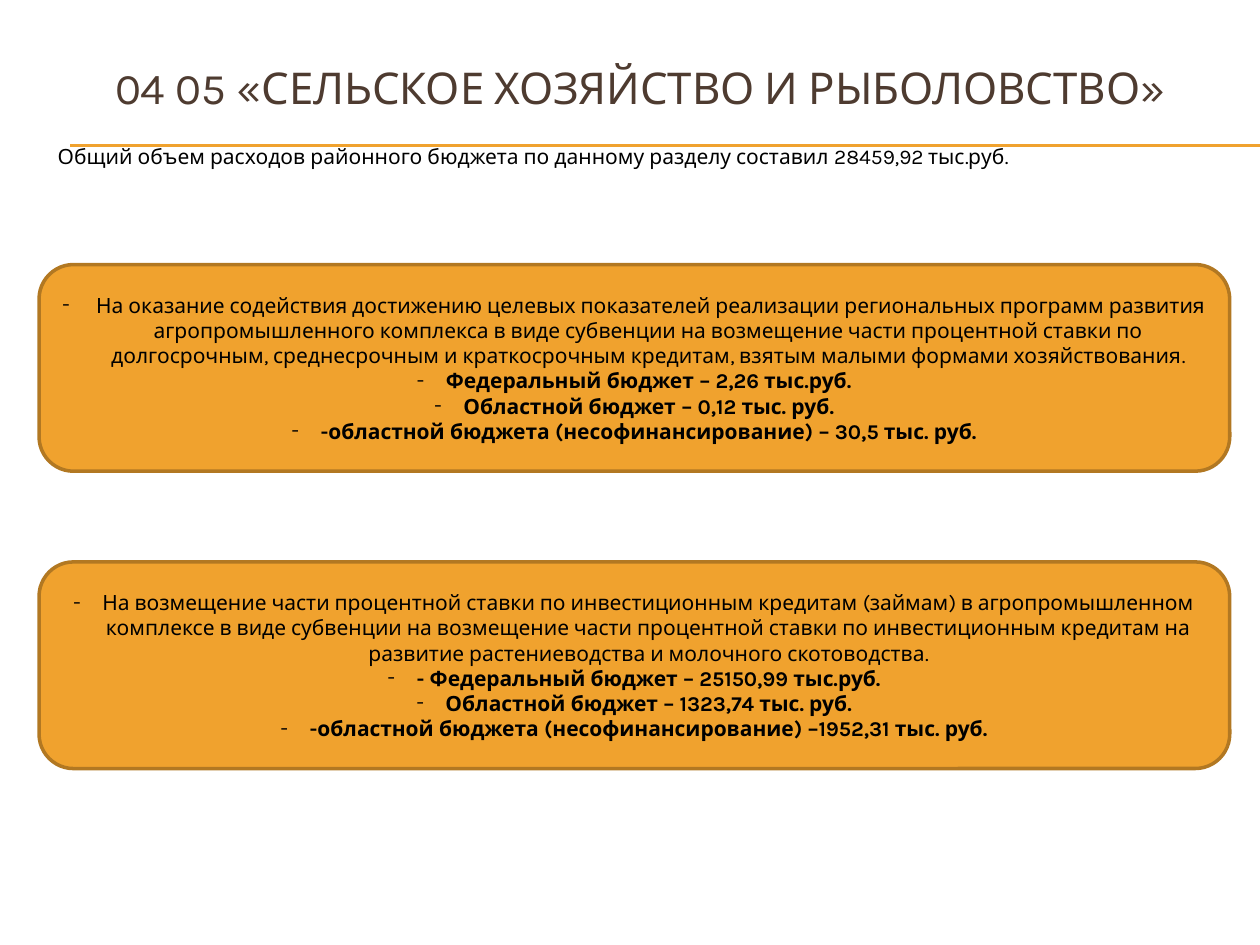
from lxml.etree import SubElement
from pptx import Presentation
from pptx.dml.color import RGBColor
from pptx.enum.shapes import MSO_CONNECTOR as Conn, MSO_SHAPE as Shape
from pptx.enum.text import MSO_ANCHOR as Anchor, PP_ALIGN as Align
from pptx.oxml.ns import qn
from pptx.util import Pt

FONT = "Karla"
GOLD = RGBColor(0xF0, 0xA2, 0x2E)
EDGE = RGBColor(0xB2, 0x78, 0x22)
BROWN = RGBColor(0x4E, 0x3B, 0x30)
BLACK = RGBColor(0, 0, 0)

TITLE = "04 05 «СЕЛЬСКОЕ ХОЗЯЙСТВО И РЫБОЛОВСТВО»"
TOTAL = ("Общий объем расходов районного бюджета по данному разделу "
         "составил 28459,92 тыс.руб.")
# Each box: top, purpose of the money, sums by budget
BOXES = [
    (151.2,
     " На оказание содействия достижению целевых показателей реализации "
     "региональных программ развития агропромышленного комплекса в виде "
     "субвенции на возмещение части процентной ставки по долгосрочным, "
     "среднесрочным и краткосрочным кредитам, взятым малыми формами "
     "хозяйствования.",
     ["Федеральный бюджет – 2,26 тыс.руб.",
      "Областной бюджет – 0,12 тыс. руб.",
      "-областной бюджета (несофинансирование) – 30,5 тыс. руб."]),
    (321.1,
     "На возмещение части процентной ставки по инвестиционным кредитам "
     "(займам) в агропромышленном комплексе в виде субвенции на возмещение "
     "части процентной ставки по инвестиционным кредитам на развитие "
     "растениеводства и молочного скотоводства.",
     ["- Федеральный бюджет – 25150,99 тыс.руб.",
      "Областной бюджет – 1323,74 тыс. руб.",
      "-областной бюджета (несофинансирование) –1952,31 тыс. руб."]),
]


def write(para, text, align, size=12, color=BLACK, bold=False):
    para.alignment = align
    run = para.add_run()
    run.text = text
    look = {"name": FONT, "size": Pt(size), "bold": bold}
    for key, value in look.items():
        setattr(run.font, key, value)
    run.font.color.rgb = color


def indent(para, left, first):
    props = para._p.get_or_add_pPr()
    props.set("marL", str(Pt(left)))
    props.set("indent", str(Pt(first)))
    return props


def add_title(slide):
    title = slide.shapes.title
    place = {"left": 23.8, "top": 16.6, "width": 684, "height": 66.2}
    for key, value in place.items():
        setattr(title, key, Pt(value))
    frame = title.text_frame
    frame.vertical_anchor = Anchor.MIDDLE
    write(frame.paragraphs[0], TITLE, Align.CENTER, 25, BROWN)


def add_rule(slide, y):
    rule = slide.shapes.add_connector(Conn.STRAIGHT, Pt(40.3), Pt(y),
                                      Pt(720), Pt(y))
    rule.line.color.rgb = GOLD
    rule.line.width = Pt(0.75)
    SubElement(rule._element.spPr, qn("a:effectLst"))


def add_total(slide):
    box = slide.shapes.add_textbox(Pt(11.5), Pt(78.5), Pt(697.7), Pt(33.8))
    frame = box.text_frame
    frame.word_wrap = True
    frame.vertical_anchor = Anchor.TOP
    para = frame.paragraphs[0]
    write(para, TOTAL, Align.JUSTIFY)
    indent(para, 0, 14.4)


def add_box(slide, top, aim, sums):
    box = slide.shapes.add_shape(Shape.ROUNDED_RECTANGLE, Pt(22.3), Pt(top),
                                 Pt(680.4), Pt(118.1))
    box.shadow.inherit = False
    box.fill.solid()
    box.fill.fore_color.rgb = GOLD
    box.line.color.rgb = EDGE
    box.line.width = Pt(2)
    frame = box.text_frame
    frame.word_wrap = True
    frame.vertical_anchor = Anchor.MIDDLE
    for i, text in enumerate([aim, *sums]):
        para = frame.paragraphs[0] if i == 0 else frame.add_paragraph()
        write(para, text, Align.CENTER, bold=i > 0)
        props = indent(para, 16.5, -16.5)
        SubElement(props, qn("a:buFont")).set("typeface", FONT)
        SubElement(props, qn("a:buChar")).set("char", "-")


def main():
    prs = Presentation()
    prs.slide_width, prs.slide_height = Pt(720), Pt(540)
    slide = prs.slides.add_slide(prs.slide_layouts[5])
    for y in (82.8, 83.5):
        add_rule(slide, y)
    add_title(slide)
    add_total(slide)
    for top, aim, sums in BOXES:
        add_box(slide, top, aim, sums)
    prs.save("out.pptx")


if __name__ == "__main__":
    main()
